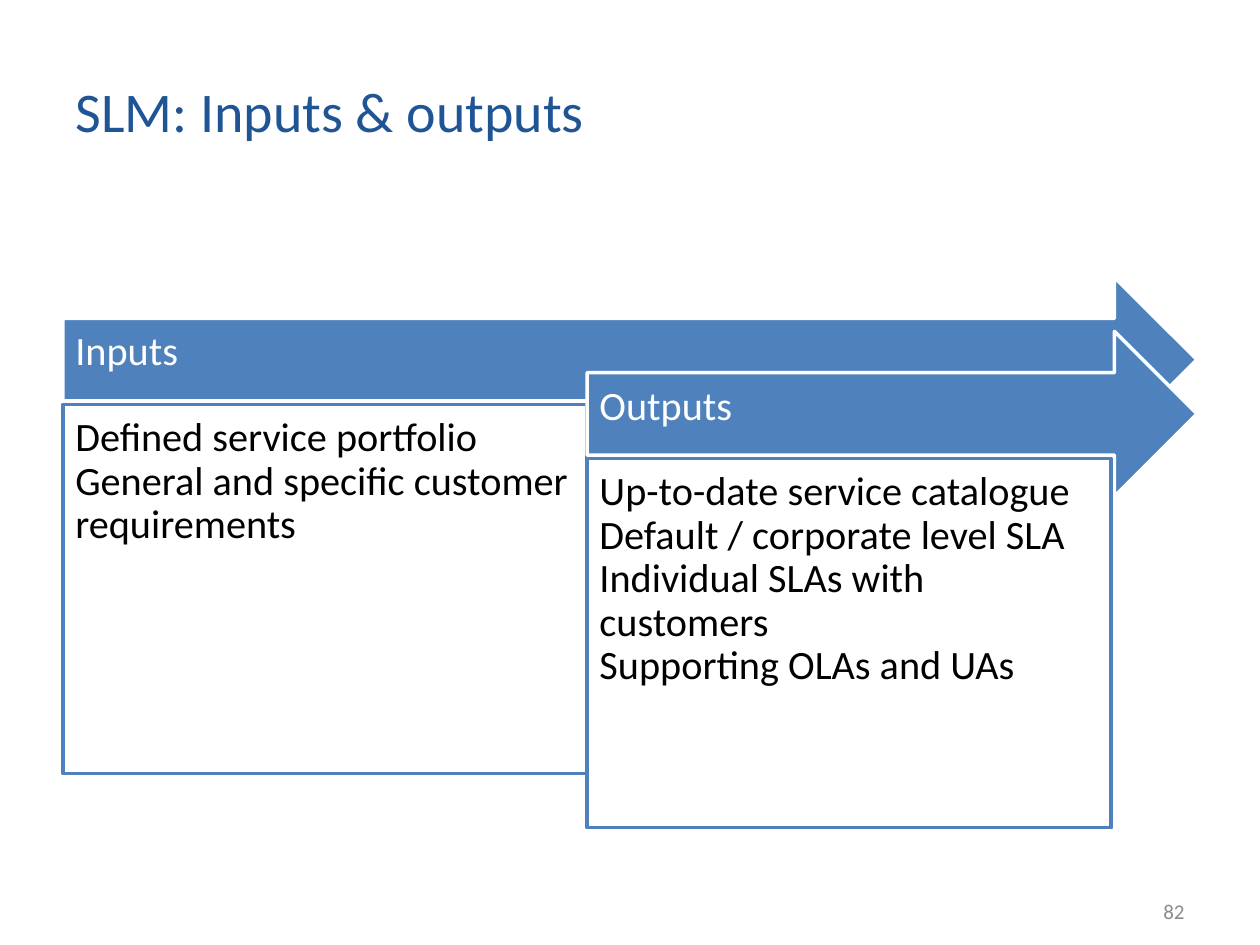
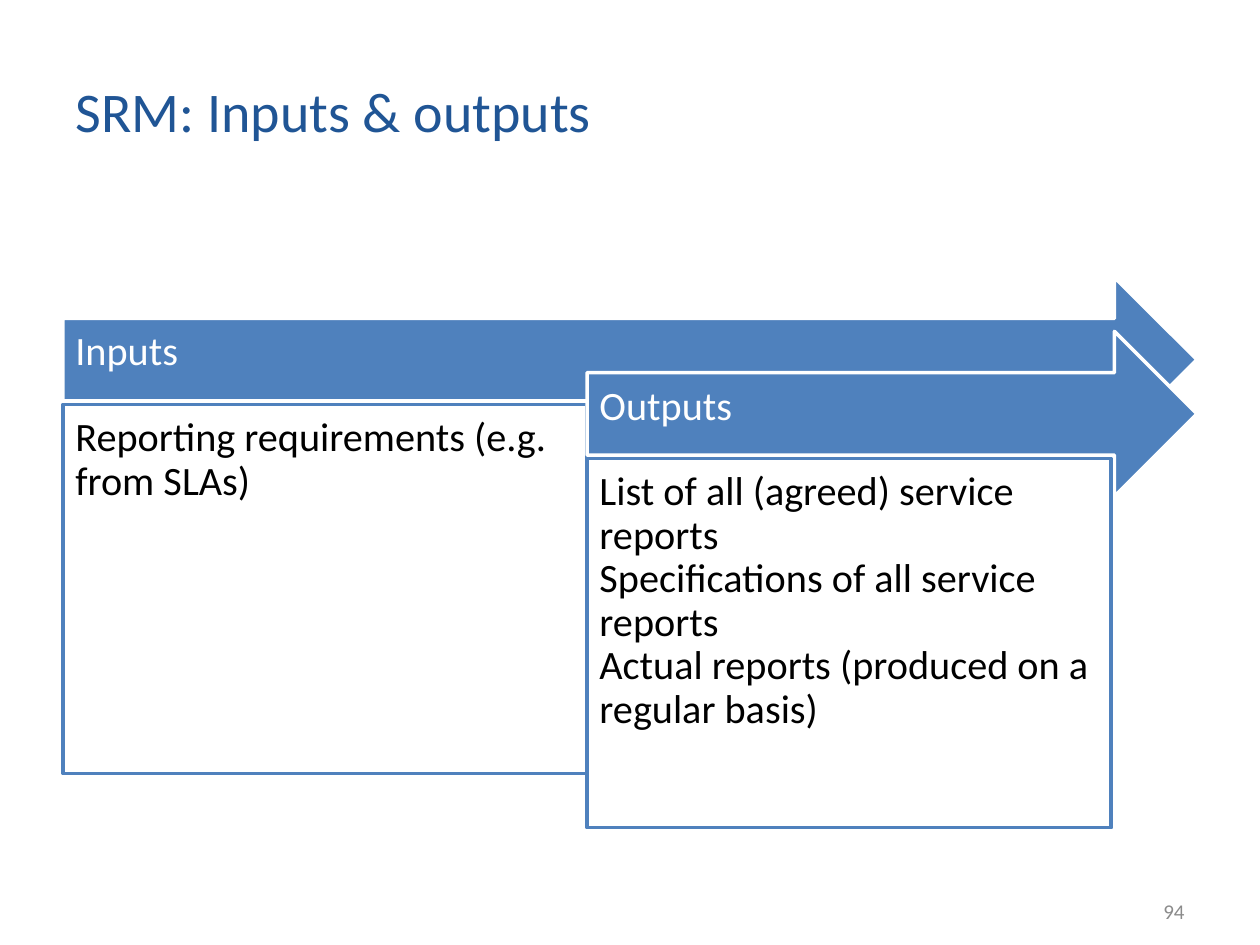
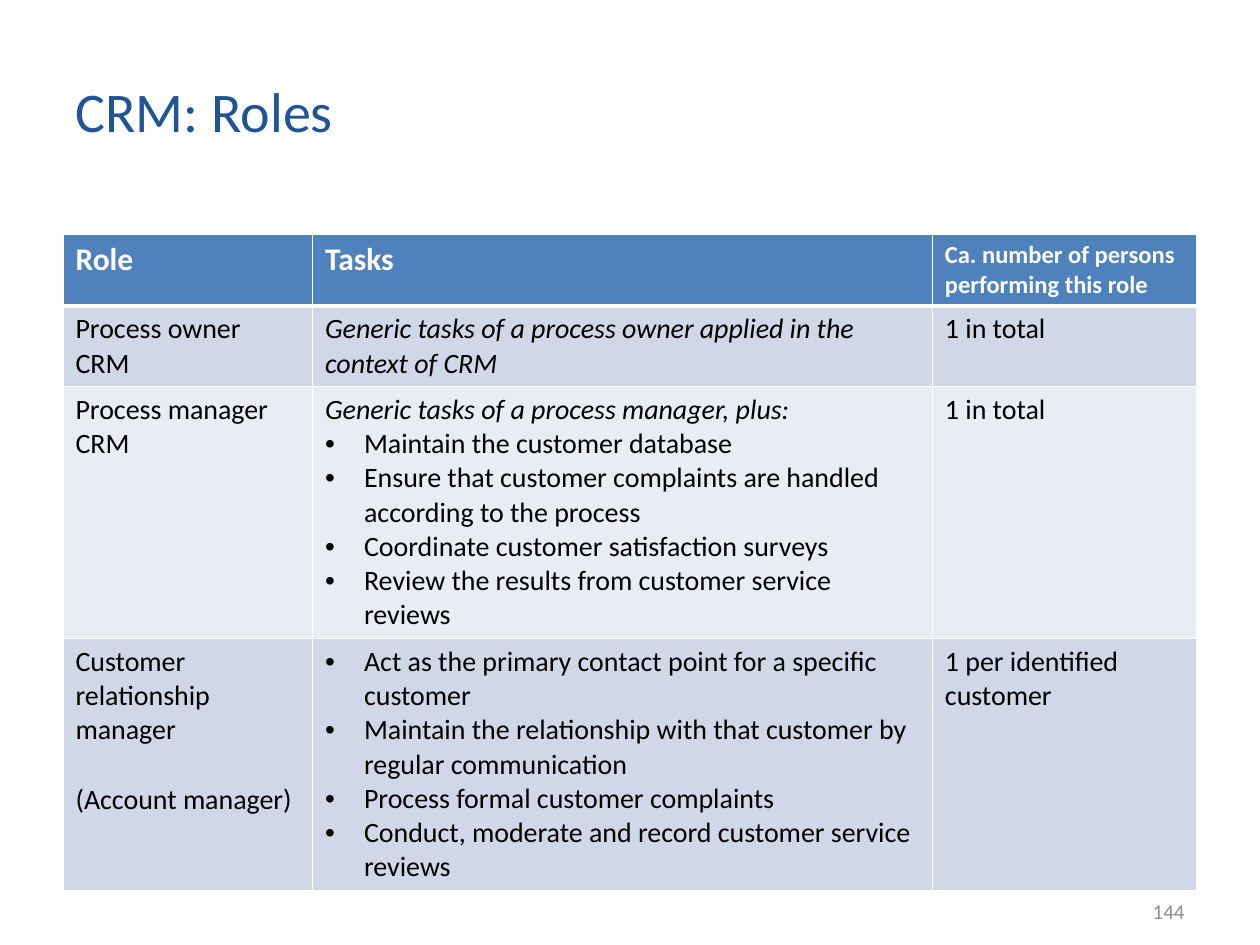
from lxml import etree
from pptx import Presentation
from pptx.dml.color import RGBColor
from pptx.enum.shapes import MSO_SHAPE
from pptx.enum.text import MSO_ANCHOR, MSO_AUTO_SIZE, PP_ALIGN
from pptx.oxml.ns import qn
from pptx.util import Inches, Pt

ARROW = MSO_SHAPE.RIGHT_ARROW
RECTANGLE = MSO_SHAPE.RECTANGLE
TOP = MSO_ANCHOR.TOP
MIDDLE = MSO_ANCHOR.MIDDLE
NO_AUTOFIT = MSO_AUTO_SIZE.NONE
LEFT = PP_ALIGN.LEFT
RIGHT = PP_ALIGN.RIGHT

FONT = "Calibri"
TITLE_BLUE = RGBColor(0x20, 0x55, 0x95)
BLUE = RGBColor(0x4F, 0x81, 0xBD)
BAND_DARK = RGBColor(0xD0, 0xD8, 0xE7)
BAND_LIGHT = RGBColor(0xE9, 0xEC, 0xF3)
GREY = RGBColor(0x8B, 0x8B, 0x8B)
BLACK = RGBColor(0, 0, 0)
WHITE = RGBColor(0xFF, 0xFF, 0xFF)

TITLE_ONLY_LAYOUT = 5
MARGIN = 0.5
CONTENT_WIDTH = 9
PANEL_WIDTH = 4.16
PANEL_HEIGHT = 2.93
ARROW_HEIGHT = 1.31
ARROW_TOP = 2.2
ARROW_STEP = 0.43
PANEL_OFFSET = 1.01

COLUMN_WIDTHS = (1.98, 4.92, 2.1)
ROW_HEIGHTS = (0.56, 0.64, 2, 2)
HEADERS = (("Role", 18), ("Tasks", 18), ("Ca. number of persons performing this role", 14))
ROLES = (
    (
        ("Process owner CRM",),
        "Generic tasks of a process owner applied in the context of CRM",
        (),
        "1 in total",
    ),
    (
        ("Process manager CRM",),
        "Generic tasks of a process manager, plus:",
        (
            "Maintain the customer database",
            "Ensure that customer complaints are handled according to the process",
            "Coordinate customer satisfaction surveys",
            "Review the results from customer service reviews",
        ),
        "1 in total",
    ),
    (
        ("Customer relationship manager", "(Account manager)"),
        "",
        (
            "Act as the primary contact point for a specific customer",
            "Maintain the relationship with that customer by regular communication",
            "Process formal customer complaints",
            "Conduct, moderate and record customer service reviews",
        ),
        "1 per identified customer",
    ),
)


def format_paragraph(paragraph, size, color, align=LEFT, bold=False, italic=False):
    paragraph.alignment = align
    font = paragraph.font
    font.name = FONT
    font.size = Pt(size)
    font.color.rgb = color
    font.bold = bold
    font.italic = italic


def fill_lines(text_frame, lines):
    text_frame.text = "\n".join(lines)
    return text_frame.paragraphs


def add_slide(presentation, title, number):
    slide = presentation.slides.add_slide(presentation.slide_layouts[TITLE_ONLY_LAYOUT])
    heading = slide.shapes.title
    heading.left, heading.top = Inches(MARGIN), Inches(0.3)
    heading.width, heading.height = Inches(8.04), Inches(1.15)
    heading.text_frame.text = title
    heading.text_frame.auto_size = NO_AUTOFIT
    heading.text_frame.vertical_anchor = MIDDLE
    format_paragraph(heading.text_frame.paragraphs[0], 32, TITLE_BLUE)

    footer = slide.shapes.add_textbox(Inches(7.17), Inches(7.03), Inches(2.33), Inches(0.4))
    footer.text_frame.word_wrap = True
    footer.text_frame.vertical_anchor = MIDDLE
    footer.text_frame.text = str(number)
    format_paragraph(footer.text_frame.paragraphs[0], 12, GREY, RIGHT)
    return slide


def add_block(slide, preset, box, lines, fill, line, color, anchor, insets):
    shape = slide.shapes.add_shape(preset, *(Inches(value) for value in box))
    shape.shadow.inherit = False
    shape.fill.solid()
    shape.fill.fore_color.rgb = fill
    shape.line.color.rgb = line
    shape.line.width = Pt(2)
    frame = shape.text_frame
    frame.word_wrap = True
    frame.vertical_anchor = anchor
    frame.margin_left, frame.margin_top, frame.margin_right, frame.margin_bottom = (
        Inches(inset) for inset in insets
    )
    for paragraph in fill_lines(frame, lines):
        paragraph.line_spacing = 0.9
        format_paragraph(paragraph, 23, color)


def add_flow(slide, inputs, outputs):
    for index, (label, lines) in enumerate((("Inputs", inputs), ("Outputs", outputs))):
        left = MARGIN + index * PANEL_WIDTH
        top = ARROW_TOP + index * ARROW_STEP
        arrow_box = (left, top, MARGIN + CONTENT_WIDTH - left, ARROW_HEIGHT)
        panel_box = (left, top + PANEL_OFFSET, PANEL_WIDTH, PANEL_HEIGHT)
        add_block(slide, ARROW, arrow_box, [label], BLUE, WHITE, WHITE, MIDDLE,
                  (0.1, 0.1, 0.28, 0.21))
        add_block(slide, RECTANGLE, panel_box, lines, WHITE, BLUE, BLACK, TOP, (0.1,) * 4)


def set_borders(cell, top, bottom):
    properties = cell._tc.get_or_add_tcPr()
    sides = (("a:lnL", 0.96), ("a:lnR", 0.96), ("a:lnT", top), ("a:lnB", bottom))
    for index, (tag, width) in enumerate(sides):
        border = etree.Element(qn(tag), w=str(Pt(width)))
        solid = etree.SubElement(border, qn("a:solidFill"))
        etree.SubElement(solid, qn("a:srgbClr"), val=str(WHITE))
        properties.insert(index, border)


def add_bullet(paragraph):
    properties = paragraph._p.get_or_add_pPr()
    properties.set("marL", str(Inches(0.31)))
    properties.set("indent", str(-Inches(0.31)))
    etree.SubElement(properties, qn("a:buFont"), typeface="Arial")
    etree.SubElement(properties, qn("a:buChar"), char="•")


def fill_tasks(cell, intro, tasks):
    lines = ([intro] if intro else []) + list(tasks)
    for paragraph in fill_lines(cell.text_frame, lines):
        is_intro = paragraph.text == intro
        if not is_intro:
            add_bullet(paragraph)
        format_paragraph(paragraph, 16, BLACK, italic=is_intro)


def fill_plain(cell, lines):
    for index, paragraph in enumerate(fill_lines(cell.text_frame, lines)):
        if index:
            paragraph.space_before = Pt(20)
        format_paragraph(paragraph, 16, BLACK)


def add_roles_table(slide):
    table = slide.shapes.add_table(
        len(ROW_HEIGHTS), len(COLUMN_WIDTHS), Inches(MARGIN), Inches(1.86),
        Inches(CONTENT_WIDTH), Inches(sum(ROW_HEIGHTS)),
    ).table
    table.horz_banding = False
    for column, width in zip(table.columns, COLUMN_WIDTHS):
        column.width = Inches(width)
    for index, (row, height) in enumerate(zip(table.rows, ROW_HEIGHTS)):
        row.height = Inches(height)
        fill = (BLUE, BAND_DARK, BAND_LIGHT, BAND_DARK)[index]
        for cell in row.cells:
            cell.fill.solid()
            cell.fill.fore_color.rgb = fill
            set_borders(cell, 3 if index == 1 else 0.96, 3 if index == 0 else 0.96)
    for column, (header, size) in enumerate(HEADERS):
        cell = table.cell(0, column)
        cell.text_frame.text = header
        format_paragraph(cell.text_frame.paragraphs[0], size, WHITE, bold=True)
    for row, (role, intro, tasks, persons) in enumerate(ROLES, start=1):
        fill_plain(table.cell(row, 0), role)
        fill_tasks(table.cell(row, 1), intro, tasks)
        fill_plain(table.cell(row, 2), [persons])


def main():
    presentation = Presentation()
    presentation.slide_width = Inches(10)
    presentation.slide_height = Inches(7.5)

    add_flow(
        add_slide(presentation, "SLM: Inputs & outputs", 82),
        ["Defined service portfolio", "General and specific customer requirements"],
        [
            "Up-to-date service catalogue",
            "Default / corporate level SLA",
            "Individual SLAs with customers",
            "Supporting OLAs and UAs",
        ],
    )
    add_flow(
        add_slide(presentation, "SRM: Inputs & outputs", 94),
        ["Reporting requirements (e.g. from SLAs)"],
        [
            "List of all (agreed) service reports",
            "Specifications of all service reports",
            "Actual reports (produced on a regular basis)",
        ],
    )
    add_roles_table(add_slide(presentation, "CRM: Roles", 144))

    presentation.save("out.pptx")


if __name__ == "__main__":
    main()
